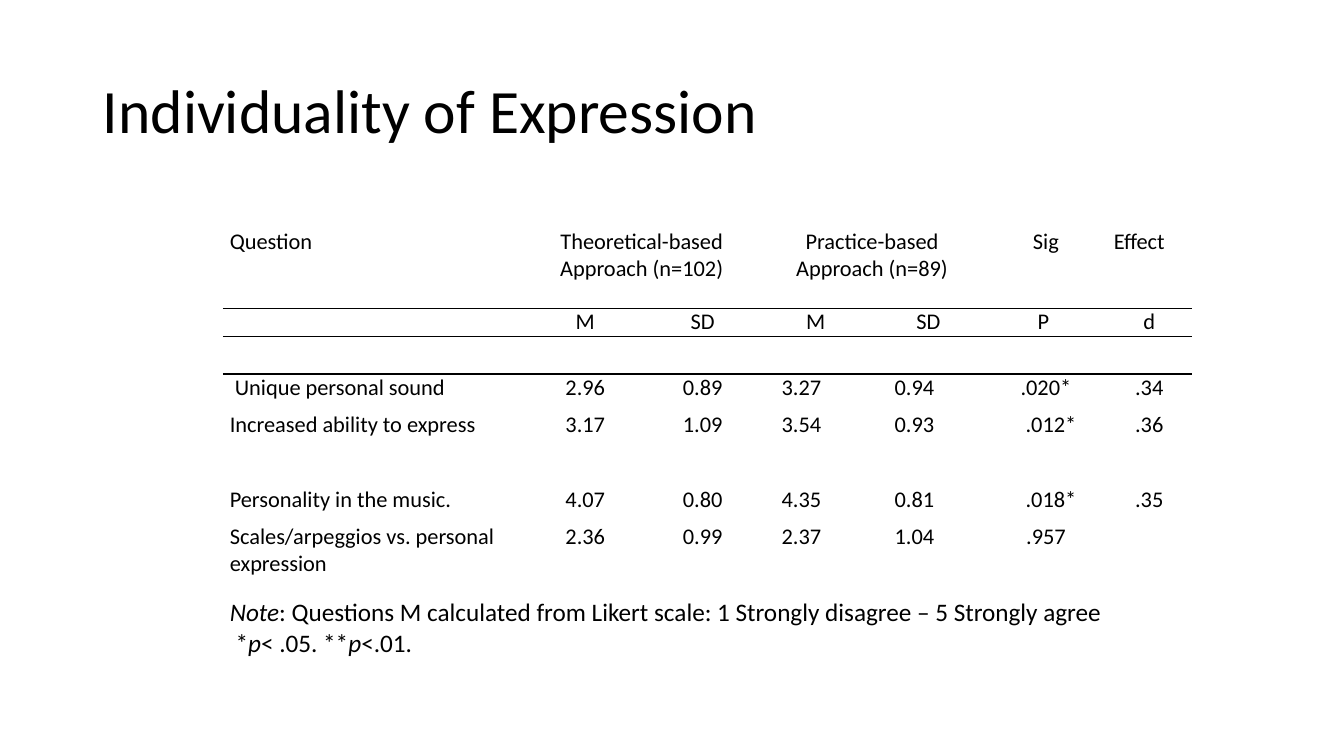
"""Build a slide with a table of survey results on individuality of expression."""
from lxml.etree import SubElement
from pptx import Presentation
from pptx.dml.color import RGBColor
from pptx.enum.text import MSO_ANCHOR, PP_ALIGN
from pptx.oxml import parse_xml
from pptx.oxml.ns import nsdecls, qn
from pptx.util import Inches, Pt

BLACK = RGBColor(0, 0, 0)
FONT = "Calibri"
PLAIN = "{2D5ABB26-0587-4C30-8999-92F81FD0307C}"
WIDTHS = [2.99, 1.21, 1.12, 0.84, 0.28, 1.12, 1.21, 0.84]
HEIGHTS = [0.8, 0.28, 0.37, 0.37, 0.74, 0.37, 0.74, 0.74]
SPAN = None
ROWS = [
    ["Question", "Theoretical-based Approach (n=102)", SPAN,
     "Practice-based Approach (n=89)", SPAN, SPAN, "Sig", "Effect"],
    ["", "M", "SD", "M", SPAN, "SD", "P ", "d"],
    ["", "", "", "", SPAN, "", "", ""],
    [" Unique personal sound", "2.96", "0.89", "3.27", "0.94", SPAN, ".020*", ".34"],
    ["Increased ability to express", "3.17", "1.09", "3.54", "0.93", SPAN, ".012*", ".36"],
    ["Personality in the music.", "4.07", "0.80", "4.35", "0.81", SPAN, ".018*", ".35"],
    ["Scales/arpeggios vs. personal expression", "2.36", "0.99", "2.37", "1.04", SPAN,
     ".957", ""],
    [""] + [SPAN] * 7,
]
NOTE = [
    [("Note", True),
     (": Questions M calculated from Likert scale: 1 Strongly disagree – 5 Strongly agree", False)],
    [(" *", False), ("p", True), ("< .05. **", False), ("p", True), ("<.01.", False)],
]
SHIFTED = {".012*", ".018*"}
RULES = {0: ["lnB"], 1: ["lnT", "lnB"], 2: ["lnT"]}


def style(run, size, italic=False):
    font = run.font
    font.name, font.size, font.italic = FONT, Pt(size), italic
    font.color.rgb = BLACK


def add_title(slide, text):
    title = slide.shapes.title
    title.left, title.top = Inches(0.92), Inches(0.4)
    title.width, title.height = Inches(11.5), Inches(1.45)
    frame = title.text_frame
    frame.text = text
    frame.vertical_anchor = MSO_ANCHOR.MIDDLE
    para = frame.paragraphs[0]
    para.alignment, para.line_spacing = PP_ALIGN.LEFT, 0.9
    style(para.runs[0], 44)


def add_rules(cell, sides):
    props = cell._tc.get_or_add_tcPr()
    for spot, side in enumerate(sides):
        props.insert(spot, parse_xml(
            f'<a:{side} {nsdecls("a")} w="12700"><a:solidFill>'
            f'<a:srgbClr val="{BLACK}"/></a:solidFill></a:{side}>'))


def fill_cell(cell, text, align):
    cell.text_frame.text = text
    para = cell.text_frame.paragraphs[0]
    para.alignment = align
    if text:
        style(para.runs[0], 16)
    else:
        SubElement(para._p, qn("a:endParaRPr"), sz="1600")
    if text in SHIFTED:
        cell.margin_left = Inches(0.17)


def fill_note(cell):
    frame = cell.text_frame
    for spot, parts in enumerate(NOTE):
        para = frame.add_paragraph() if spot else frame.paragraphs[0]
        for text, italic in parts:
            run = para.add_run()
            run.text = text
            style(run, 18, italic)


def merge_spans(table, row, texts):
    for col, text in enumerate(texts):
        end = col
        while end + 1 < len(texts) and texts[end + 1] is SPAN:
            end += 1
        if text is not SPAN and end > col:
            table.cell(row, col).merge(table.cell(row, end))


def add_grid(slide):
    shape = slide.shapes.add_table(
        len(ROWS), len(WIDTHS), Inches(2.21), Inches(2.26),
        Inches(sum(WIDTHS)), Inches(sum(HEIGHTS)))
    table = shape.table
    table.first_row = table.horz_banding = False
    table._tbl.tblPr.find(qn("a:tableStyleId")).text = PLAIN
    for column, width in zip(table.columns, WIDTHS):
        column.width = Inches(width)
    for row, (texts, height) in enumerate(zip(ROWS, HEIGHTS)):
        table.rows[row].height = Inches(height)
        for col, text in enumerate(texts):
            cell = table.cell(row, col)
            cell.margin_left = cell.margin_right = Inches(0.07)
            cell.margin_top = cell.margin_bottom = 0
            cell.fill.background()
            add_rules(cell, RULES.get(row, []))
            left = col == 0 or text == "Effect"
            if row < len(ROWS) - 1 or col:
                fill_cell(cell, text or "", PP_ALIGN.LEFT if left else PP_ALIGN.CENTER)
        merge_spans(table, row, texts)
    fill_note(table.cell(len(ROWS) - 1, 0))


def main():
    deck = Presentation()
    deck.slide_width, deck.slide_height = Inches(13.33), Inches(7.5)
    slide = deck.slides.add_slide(deck.slide_layouts[5])
    add_title(slide, "Individuality of Expression")
    add_grid(slide)
    deck.save("out.pptx")


if __name__ == "__main__":
    main()
